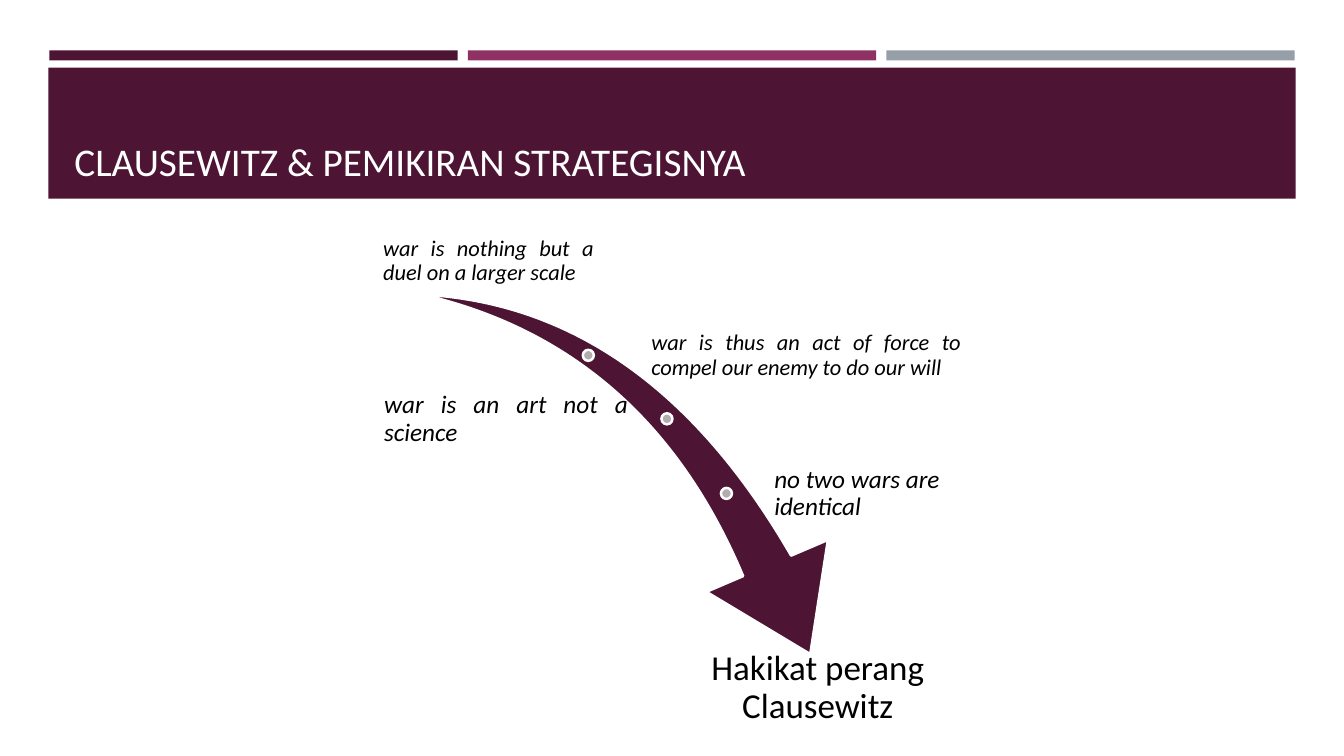
from pptx import Presentation
from pptx import util as u
from pptx.dml.color import RGBColor
from pptx.enum import shapes, text

PX = 9144  # EMU per px, 100 px to the inch
FONT = "Calibri"

PLUM = RGBColor(0x4D, 0x14, 0x34)
MAGENTA = RGBColor(0x90, 0x31, 0x63)
SLATE = RGBColor(0x96, 0x9F, 0xA7)
DOT_GREY = RGBColor(0xB2, 0xAC, 0xAE)
WHITE = RGBColor(0xFF, 0xFF, 0xFF)
BLACK = RGBColor(0, 0, 0)

BOTTOM, MIDDLE, TOP = (text.MSO_ANCHOR.BOTTOM, text.MSO_ANCHOR.MIDDLE,
                       text.MSO_ANCHOR.TOP)
JUSTIFY, LEFT, CENTER = (text.PP_ALIGN.JUSTIFY, text.PP_ALIGN.LEFT,
                         text.PP_ALIGN.CENTER)


def px(*lengths):
    return [u.Emu(length * PX) for length in lengths]


def set_format(target, values):
    for name, value in values.items():
        setattr(target, name, value)


def add_filled(slide, preset, box, fill, outline=None):
    part = slide.shapes.add_shape(preset, *px(*box))
    part.shadow.inherit = False
    part.fill.solid()
    part.fill.fore_color.rgb = fill
    if outline is None:
        part.line.fill.background()
    else:
        part.line.color.rgb = outline
        part.line.width = u.Pt(1.75)
    return part


def add_label(slide, box, words, size, color=BLACK, italic=False,
              anchor=MIDDLE, align=LEFT, spacing=0.9, insets=(3, 3)):
    frame = slide.shapes.add_textbox(*px(*box)).text_frame
    side, end = px(*insets)
    set_format(frame, {
        "word_wrap": True, "vertical_anchor": anchor,
        "margin_left": side, "margin_right": side,
        "margin_top": end, "margin_bottom": end,
    })
    paragraph = frame.paragraphs[0]
    set_format(paragraph, {"alignment": align, "line_spacing": spacing})
    run = paragraph.add_run()
    run.text = words
    set_format(run.font, {"name": FONT, "size": u.Pt(size), "italic": italic})
    run.font.color.rgb = color


def add_header(slide):
    rectangle = shapes.MSO_SHAPE.RECTANGLE
    for column, color in enumerate((PLUM, MAGENTA, SLATE)):
        add_filled(slide, rectangle, (49 + column * 415, 50, 405, 10), color)
    add_filled(slide, rectangle, (48, 67, 1237, 130), PLUM)
    add_label(slide, (64, 77, 1206, 111), "CLAUSEWITZ & PEMIKIRAN STRATEGISNYA",
              28, WHITE, anchor=BOTTOM, spacing=1.0, insets=(10, 5))


def add_arrow(slide):
    arrow = add_filled(slide, shapes.MSO_SHAPE.SWOOSH_ARROW,
                       (409, 306, 452, 315), PLUM, WHITE)
    arrow.rotation = 73.3
    arrow.adjustments[0] = 0.163
    arrow.adjustments[1] = 0.314
    for left, top in ((578, 347), (656, 410), (715, 484)):
        add_filled(slide, shapes.MSO_SHAPE.OVAL, (left, top, 11, 11),
                   DOT_GREY, WHITE)


def add_quotes(slide):
    quotes = (
        (378, 201, 213, "war is nothing but a duel on a larger scale",
         16, BOTTOM, JUSTIFY, 2),
        (644, 311, 311,
         "war is thus an act of force to compel our enemy to do our will",
         16, MIDDLE, JUSTIFY, 2),
        (378, 374, 248, "war is an art not a science",
         18, MIDDLE, JUSTIFY, 3),
        (765, 448, 190, "no two wars are identical", 18, MIDDLE, LEFT, 3),
    )
    for left, top, width, words, size, anchor, align, inset in quotes:
        add_label(slide, (left, top, width, 84), words, size, italic=True,
                  anchor=anchor, align=align, insets=(inset, inset))


def main():
    deck = Presentation()
    deck.slide_width, deck.slide_height = px(1333, 750)
    slide = deck.slides.add_slide(deck.slide_layouts[6])

    # Colour bars and title band
    add_header(slide)

    # Swoosh with its three stops
    add_arrow(slide)

    # Quotes along the arrow and the conclusion at its tip
    add_quotes(slide)
    add_label(slide, (667, 642, 288, 84), "Hakikat perang Clausewitz", 25,
              anchor=TOP, align=CENTER)

    deck.save("out.pptx")


if __name__ == "__main__":
    main()
